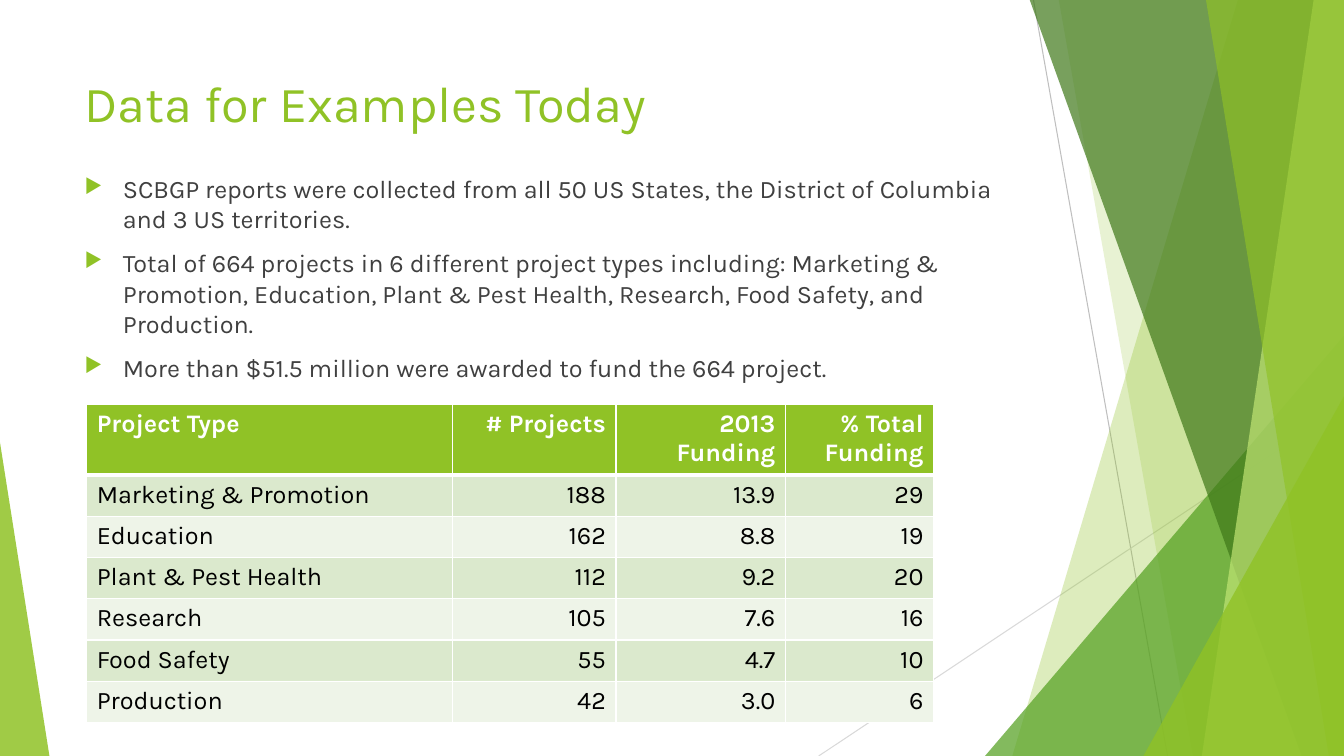
from dataclasses import dataclass

from lxml import etree
from pptx import Presentation
from pptx.dml.color import RGBColor
from pptx.enum.shapes import MSO_CONNECTOR, MSO_SHAPE
from pptx.enum.text import MSO_ANCHOR, PP_ALIGN
from pptx.oxml.ns import qn
from pptx.util import Pt

PX = 9144  # EMU per px, 100 px to the inch
WIDTH, HEIGHT = 1333, 750
BLANK_LAYOUT = 6
STRAIGHT = MSO_CONNECTOR.STRAIGHT
TRIANGLE = MSO_SHAPE.ISOSCELES_TRIANGLE
TOP = MSO_ANCHOR.TOP
LEFT, RIGHT = PP_ALIGN.LEFT, PP_ALIGN.RIGHT


@dataclass(frozen=True)
class Theme:
    font: str = "Karla"
    title_size: int = 36
    body_size: int = 18
    green: str = "90C226"
    mid_green: str = "54A021"
    dark_green: str = "3F7819"
    pale_green: str = "C0E474"
    band_dark: str = "DBE9CD"
    band_light: str = "EEF4E8"
    text: str = "404040"
    black: str = "000000"
    white: str = "FFFFFF"
    line_dark: str = "BFBFBF"
    line_light: str = "D9D9D9"


THEME = Theme()


def add_xml(parent, tag, **attributes):
    return etree.SubElement(parent, qn(tag), **attributes)


def write(paragraph, text, size=THEME.body_size, color=THEME.text, bold=False,
          align=LEFT, space_before=0):
    paragraph.alignment = align
    paragraph.space_before = Pt(space_before)
    run = paragraph.add_run()
    run.text = text
    run.font.name = THEME.font
    run.font.size = Pt(size)
    run.font.bold = bold
    run.font.color.rgb = RGBColor.from_string(color)


def add_bullet(paragraph, indent):
    properties = paragraph._p.get_or_add_pPr()
    properties.set("marL", str(indent * PX))
    properties.set("indent", str(-indent * PX))
    add_xml(add_xml(properties, "a:buClr"), "a:srgbClr", val=THEME.green)
    add_xml(properties, "a:buSzPct", val="80000")
    add_xml(properties, "a:buChar", char="▶")


def set_borders(cell, bottom):
    properties = cell._tc.get_or_add_tcPr()
    widths = {"a:lnL": 1, "a:lnR": 1, "a:lnT": 1, "a:lnB": bottom}
    for index, (tag, width) in enumerate(widths.items()):
        border = etree.Element(qn(tag), w=str(Pt(width)))
        add_xml(add_xml(border, "a:solidFill"), "a:srgbClr", val=THEME.white)
        properties.insert(index, border)


class SlideBuilder:
    def __init__(self, slide, theme):
        self.shapes = slide.shapes
        self.theme = theme

    def line(self, x1, y1, x2, y2, color):
        connector = self.shapes.add_connector(
            STRAIGHT, x1 * PX, y1 * PX, x2 * PX, y2 * PX)
        connector.line.color.rgb = RGBColor.from_string(color)
        connector.line.width = Pt(0.75)
        add_xml(connector._element.spPr, "a:effectLst")

    def paint(self, shape, color, opacity):
        shape.shadow.inherit = False
        shape.line.fill.background()
        shape.fill.solid()
        shape.fill.fore_color.rgb = RGBColor.from_string(color)
        color_element = shape._element.spPr.find(".//" + qn("a:srgbClr"))
        add_xml(color_element, "a:alpha", val=str(opacity * 1000))

    def panel(self, top_x, bottom_x, color, opacity):
        """Full-height band from a slanted left edge to the slide's right edge."""
        builder = self.shapes.build_freeform(top_x, -1, scale=PX)
        builder.add_line_segments(
            [(WIDTH, -1), (WIDTH, HEIGHT), (bottom_x, HEIGHT)], close=True)
        self.paint(builder.convert_to_shape(), color, opacity)

    def corner(self, left, top, width, apex, color, opacity):
        """Triangle standing on the slide's bottom edge."""
        shape = self.shapes.add_shape(
            TRIANGLE, left * PX, top * PX, width * PX, (HEIGHT - top) * PX)
        shape.adjustments[0] = apex
        self.paint(shape, color, opacity)

    def text(self, left, top, width, height, lines, indent=0, **style):
        box = self.shapes.add_textbox(left * PX, top * PX, width * PX, height * PX)
        frame = box.text_frame
        frame.word_wrap = True
        frame.vertical_anchor = TOP
        for index, line in enumerate(lines):
            paragraph = frame.add_paragraph() if index else frame.paragraphs[0]
            write(paragraph, line, **style)
            if indent:
                add_bullet(paragraph, indent)

    def table(self, left, top, columns, header_height, row_height, rows):
        height = header_height + row_height * (len(rows) - 1)
        table = self.shapes.add_table(
            len(rows), len(columns), left * PX, top * PX,
            sum(columns) * PX, height * PX).table
        table.horz_banding = False
        for column, width in zip(table.columns, columns):
            column.width = width * PX
        bands = (self.theme.band_light, self.theme.band_dark)
        for r, values in enumerate(rows):
            header = r == 0
            table.rows[r].height = (header_height if header else row_height) * PX
            fill = self.theme.green if header else bands[r % 2]
            color = self.theme.white if header else self.theme.black
            for c, value in enumerate(values):
                cell = table.cell(r, c)
                cell.fill.solid()
                cell.fill.fore_color.rgb = RGBColor.from_string(fill)
                set_borders(cell, bottom=3 if header else 1)
                write(cell.text_frame.paragraphs[0], value, color=color,
                      bold=header, align=RIGHT if c else LEFT)


BULLETS = [
    "SCBGP reports were collected from all 50 US States, the District of Columbia "
    "and 3 US territories.",
    "Total of 664 projects in 6 different project types including: Marketing & "
    "Promotion, Education, Plant & Pest Health, Research, Food Safety, and Production.",
    "More than $51.5 million were awarded to fund the 664 project.",
]

FUNDING = [
    ("Project Type", "# Projects", "2013 Funding", "% Total Funding"),
    ("Marketing & Promotion", "188", "13.9", "29"),
    ("Education", "162", "8.8", "19"),
    ("Plant & Pest Health", "112", "9.2", "20"),
    ("Research", "105", "7.6", "16"),
    ("Food Safety", "55", "4.7", "10"),
    ("Production", "42", "3.0", "6"),
]


def main():
    presentation = Presentation()
    presentation.slide_width = WIDTH * PX
    presentation.slide_height = HEIGHT * PX
    slide = presentation.slides.add_slide(presentation.slide_layouts[BLANK_LAYOUT])
    builder = SlideBuilder(slide, THEME)

    # Decorative lines and green facets
    builder.line(1025, 0, 1158, HEIGHT, THEME.line_dark)
    builder.line(WIDTH, 403, 812, HEIGHT, THEME.line_light)
    builder.panel(1228, 1004, THEME.green, 30)
    builder.panel(1050, 1183, THEME.green, 20)
    builder.corner(977, 333, 356, 1, THEME.mid_green, 72)
    builder.panel(1021, 1291, THEME.dark_green, 70)
    builder.panel(1303, 1192, THEME.pale_green, 70)
    builder.panel(1196, 1318, THEME.green, 65)
    builder.corner(1134, 393, 199, 1, THEME.green, 80)
    builder.corner(0, 439, 49, 0, THEME.green, 85)

    # Title and bullets
    builder.text(74, 67, 940, 144, ["Data for Examples Today"],
                 size=THEME.title_size, color=THEME.green)
    builder.text(74, 167, 940, 493, BULLETS, indent=38, space_before=10)

    # Funding table
    builder.table(86, 401, (363, 162, 168, 147), 67, 41, FUNDING)

    presentation.save("out.pptx")


if __name__ == "__main__":
    main()
